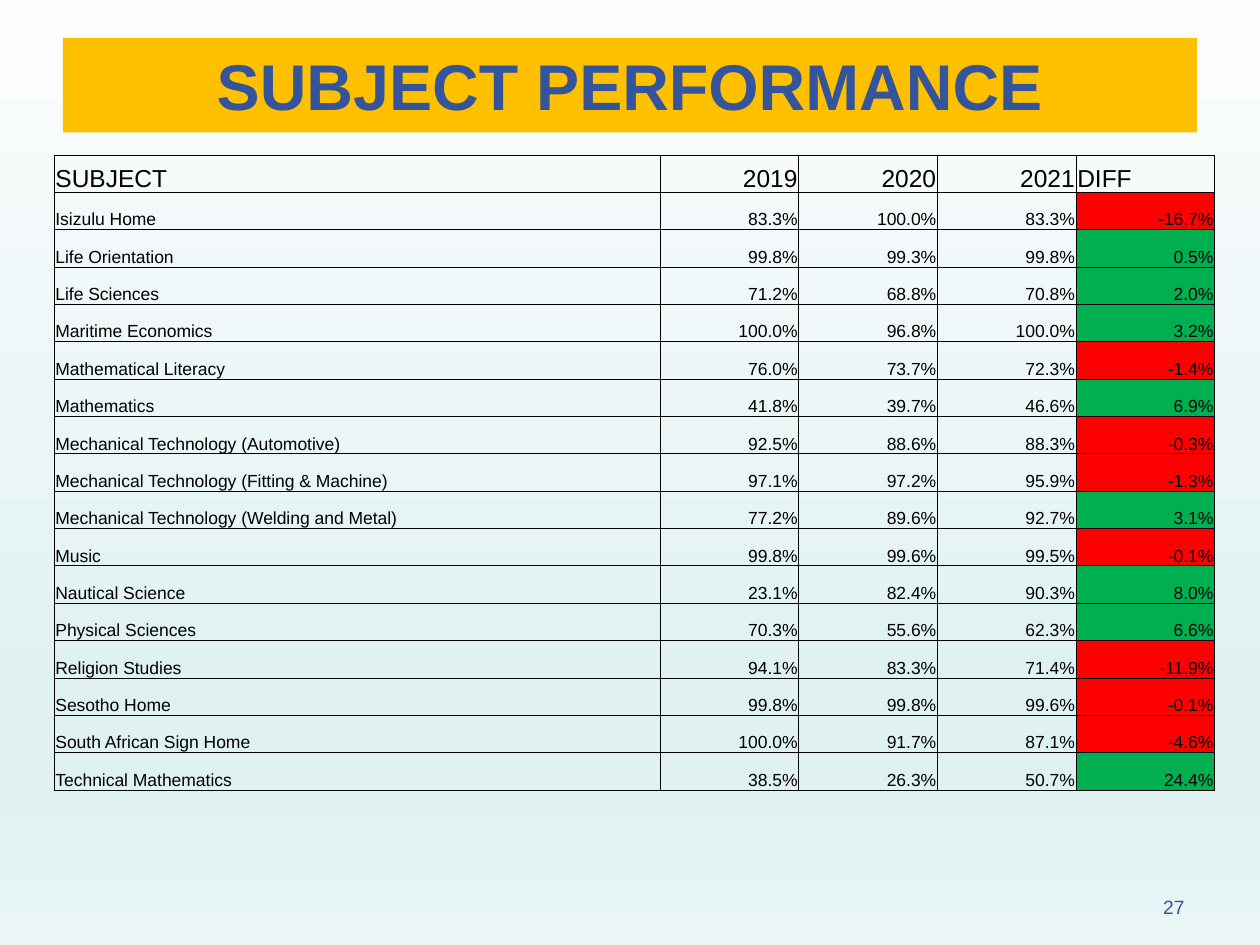
from copy import deepcopy

from lxml.etree import SubElement
from pptx import Presentation
from pptx.dml.color import RGBColor
from pptx.enum.shapes import MSO_SHAPE
from pptx.enum.text import MSO_ANCHOR, PP_ALIGN
from pptx.oxml.ns import qn
from pptx.util import Inches, Pt

HEAD = ["SUBJECT", "2019", "2020", "2021", "DIFF"]
MARKS = [
    ("Isizulu Home", 83.3, 100.0, 83.3, -16.7),
    ("Life Orientation", 99.8, 99.3, 99.8, 0.5),
    ("Life Sciences", 71.2, 68.8, 70.8, 2.0),
    ("Maritime Economics", 100.0, 96.8, 100.0, 3.2),
    ("Mathematical Literacy", 76.0, 73.7, 72.3, -1.4),
    ("Mathematics", 41.8, 39.7, 46.6, 6.9),
    ("Mechanical Technology (Automotive)", 92.5, 88.6, 88.3, -0.3),
    ("Mechanical Technology (Fitting & Machine)", 97.1, 97.2, 95.9, -1.3),
    ("Mechanical Technology (Welding and Metal)", 77.2, 89.6, 92.7, 3.1),
    ("Music", 99.8, 99.6, 99.5, -0.1),
    ("Nautical Science", 23.1, 82.4, 90.3, 8.0),
    ("Physical Sciences", 70.3, 55.6, 62.3, 6.6),
    ("Religion Studies", 94.1, 83.3, 71.4, -11.9),
    ("Sesotho Home", 99.8, 99.8, 99.6, -0.1),
    ("South African Sign Home", 100.0, 91.7, 87.1, -4.6),
    ("Technical Mathematics", 38.5, 26.3, 50.7, 24.4),
]


def paint(color, code):
    color.rgb = RGBColor.from_string(code)


class Deck:
    font = "Arial"
    blue, gold, black = "34549C", "FFC000", "000000"
    red, green = "FF0000", "00B050"

    def __init__(self, slide):
        self.slide = slide

    def backdrop(self, stops):
        fill = self.slide.background.fill
        fill.gradient()
        fill.gradient_angle = 270
        group = self.slide.element.find(".//" + qn("a:gsLst"))
        while len(group) < len(stops):
            group.append(deepcopy(group[0]))
        for stop, (place, code) in zip(fill.gradient_stops, stops):
            stop.position = place
            paint(stop.color, code)

    def label(self, frame, text, size, color, align, bold=False):
        frame.text = text
        para = frame.paragraphs[0]
        para.alignment = align
        for run in para.runs:
            run.font.name = self.font
            run.font.size = Pt(size)
            run.font.bold = bold
            paint(run.font.color, color)
        return para

    def banner(self, text, left, top, width, height):
        box = self.slide.shapes.add_shape(
            MSO_SHAPE.RECTANGLE, Inches(left), Inches(top), Inches(width), Inches(height))
        box.shadow.inherit = False
        box.fill.solid()
        paint(box.fill.fore_color, self.gold)
        box.line.fill.background()
        box.text_frame.vertical_anchor = MSO_ANCHOR.MIDDLE
        self.label(box.text_frame, text, 36.9, self.blue, PP_ALIGN.CENTER, True)

    def number(self, text, left, top, width, height):
        box = self.slide.shapes.add_textbox(
            Inches(left), Inches(top), Inches(width), Inches(height))
        box.text_frame.word_wrap = True
        para = self.label(box.text_frame, text, 11, self.blue, PP_ALIGN.RIGHT)
        para.line_spacing = 0.9
        para.space_after = Pt(6)

    def border(self, cell):
        props = cell._tc.get_or_add_tcPr()
        for place, side in enumerate(("lnL", "lnR", "lnT", "lnB")):
            line = SubElement(props, qn("a:" + side), w=str(Pt(0.5)))
            fill = SubElement(line, qn("a:solidFill"))
            SubElement(fill, qn("a:srgbClr"), val=self.black)
            props.insert(place, line)

    def cell(self, cell, text, size, align, fill=None):
        cell.margin_left = cell.margin_right = cell.margin_top = Inches(0.01)
        cell.margin_bottom = 0
        cell.vertical_anchor = MSO_ANCHOR.BOTTOM
        self.label(cell.text_frame, text, size, self.black, align)
        if fill:
            cell.fill.solid()
            paint(cell.fill.fore_color, fill)
        else:
            cell.fill.background()
        self.border(cell)

    def table(self, head, marks, left, top, widths, height):
        table = self.slide.shapes.add_table(
            len(marks) + 1, len(head), Inches(left), Inches(top),
            Inches(sum(widths)), Inches(height)).table
        table.first_row = table.horz_banding = False
        for col, width in zip(table.columns, widths):
            col.width = Inches(width)
        # Header row
        for col, text in enumerate(head):
            align = PP_ALIGN.RIGHT if text.isdigit() else PP_ALIGN.LEFT
            self.cell(table.cell(0, col), text, 14, align)
        # Subject rows, with the change coloured by its sign
        for row, (name, *rates) in enumerate(marks, 1):
            self.cell(table.cell(row, 0), name, 10, PP_ALIGN.LEFT)
            for col, rate in enumerate(rates, 1):
                tint = self.red if rate < 0 else self.green
                self.cell(table.cell(row, col), f"{rate:.1f}%", 10, PP_ALIGN.RIGHT,
                          tint if col == len(rates) else None)


def main():
    show = Presentation()
    show.slide_width, show.slide_height = Inches(10), Inches(7.5)
    deck = Deck(show.slides.add_slide(show.slide_layouts[6]))

    # Background
    deck.backdrop([(0, "FCFDFE"), (0.74, "E0F1F2"), (0.83, "E0F1F2"), (1, "EBF6F7")])
    # Title and page number
    deck.banner("SUBJECT PERFORMANCE", 0.5, 0.3, 9, 0.75)
    deck.number("27", 7.17, 7.08, 2.33, 0.27)
    # Pass rates
    deck.table(HEAD, MARKS, 0.43, 1.23, [4.81] + [1.1] * 4, 5.04)

    show.save("out.pptx")


if __name__ == "__main__":
    main()
